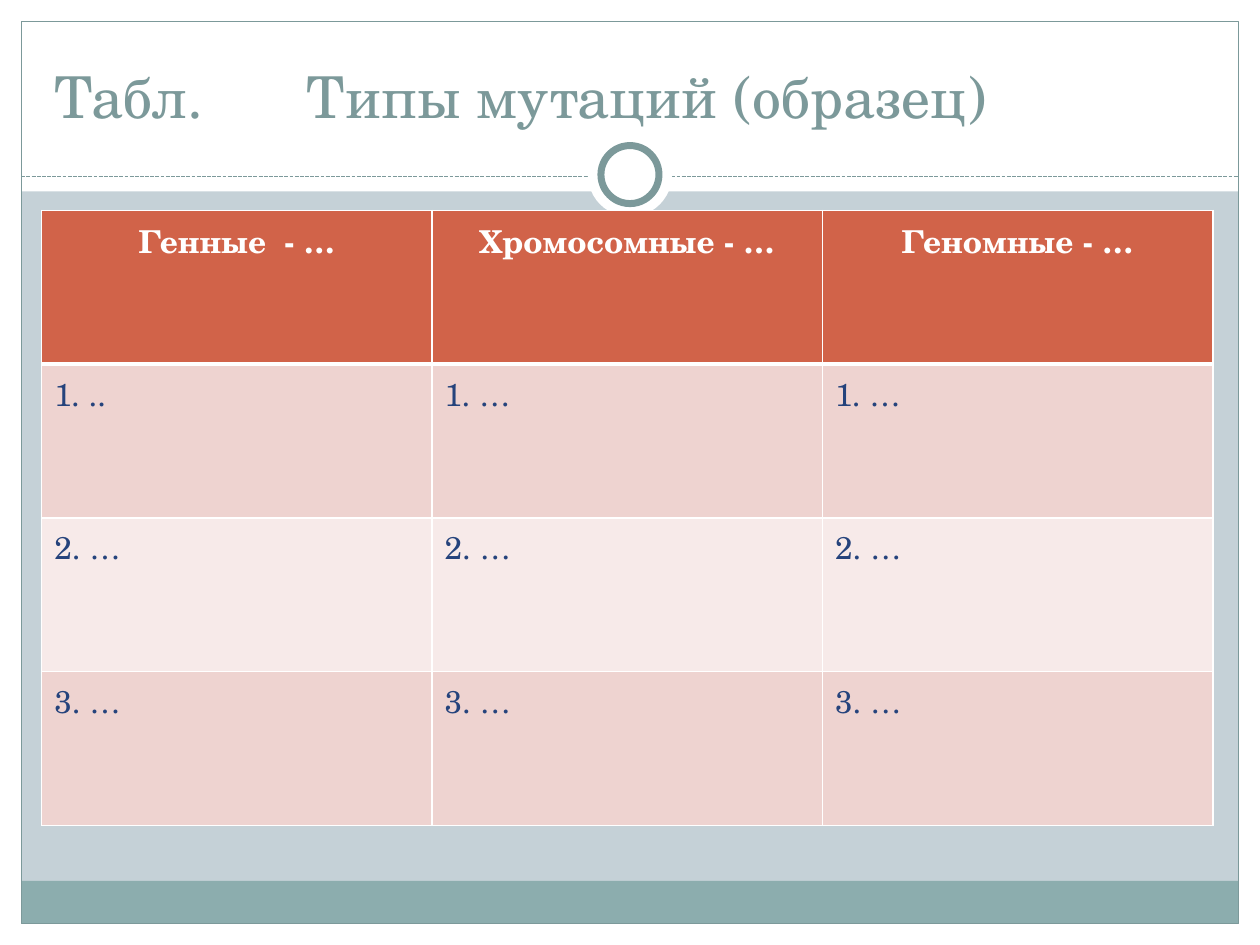
from lxml import etree
from pptx import Presentation
from pptx.dml.color import RGBColor
from pptx.enum.dml import MSO_LINE
from pptx.enum.shapes import MSO_CONNECTOR, MSO_SHAPE
from pptx.enum.text import MSO_ANCHOR, PP_ALIGN
from pptx.oxml.ns import qn
from pptx.util import Cm, Pt

RECTANGLE, OVAL = MSO_SHAPE.RECTANGLE, MSO_SHAPE.OVAL
STRAIGHT = MSO_CONNECTOR.STRAIGHT
DASH = MSO_LINE.SQUARE_DOT
BOTTOM = MSO_ANCHOR.BOTTOM
LEFT, CENTER = PP_ALIGN.LEFT, PP_ALIGN.CENTER

TITLE = "Табл. \t\tТипы мутаций (образец)"
ROWS = [
    ["Генные  - …", "Хромосомные - …", "Геномные - …"],
    ["1. ..", "1. …", "1. …"],
    ["2. …", "2. …", "2. …"],
    ["3. …", "3. …", "3. …"],
]
FONT = "TeX Gyre Schola"
COLORS = {
    "background": "C5D1D7",
    "white": "FFFFFF",
    "footer": "8CADAE",
    "accent": "7C999A",
    "header": "D16349",
    "odd": "EED3D0",
    "even": "F7EAE9",
    "text": "25437C",
}
WIDTH, HEIGHT, MARGIN = 25.4, 19.05, 0.43
BAND_HEIGHT, FOOTER_HEIGHT = 3.86, 0.86
RULE_TOP = 3.56
RING_CENTER = (WIDTH / 2, 3.52)
TABLE_LEFT, TABLE_TOP = 0.84, 4.24
COLUMN_WIDTH, ROW_HEIGHT = 7.87, 3.1


def color(name):
    return RGBColor.from_string(COLORS[name])


def add_shape(slide, kind, box, fill=None, line=None, weight=0.75):
    shape = slide.shapes.add_shape(kind, *map(Cm, box))
    shape.shadow.inherit = False
    if fill:
        shape.fill.solid()
        shape.fill.fore_color.rgb = color(fill)
    else:
        shape.fill.background()
    if line:
        shape.line.color.rgb = color(line)
        shape.line.width = Pt(weight)
    else:
        shape.line.fill.background()


def add_circle(slide, diameter, **style):
    left, top = (center - diameter / 2 for center in RING_CENTER)
    add_shape(slide, OVAL, (left, top, diameter, diameter), **style)


def add_frame(slide):
    inner_width, inner_height = WIDTH - 2 * MARGIN, HEIGHT - 2 * MARGIN
    white_boxes = [
        (0, HEIGHT - MARGIN, WIDTH, MARGIN),
        (0, 0, WIDTH, BAND_HEIGHT),
        (0, 0, MARGIN, HEIGHT),
        (WIDTH - MARGIN, 0, MARGIN, HEIGHT),
    ]
    for box in white_boxes:
        add_shape(slide, RECTANGLE, box, fill="white")
    footer_top = HEIGHT - MARGIN - FOOTER_HEIGHT
    add_shape(slide, RECTANGLE, (MARGIN, footer_top, inner_width, FOOTER_HEIGHT), fill="footer")
    add_shape(slide, RECTANGLE, (MARGIN, MARGIN, inner_width, inner_height), line="accent")
    rule = slide.shapes.add_connector(
        STRAIGHT, Cm(MARGIN), Cm(RULE_TOP), Cm(WIDTH - MARGIN), Cm(RULE_TOP))
    rule.line.color.rgb = color("accent")
    rule.line.width = Pt(0.75)
    rule.line.dash_style = DASH
    etree.SubElement(rule.element.spPr, qn("a:effectLst"))
    add_circle(slide, 1.7, fill="white")
    add_circle(slide, 1.17, fill="white", line="accent", weight=4)


def write_text(text_frame, text, size, tone, bold=False, align=LEFT):
    paragraph = text_frame.paragraphs[0]
    paragraph.alignment = align
    run = paragraph.add_run()
    run.text = text
    run.font.name = FONT
    run.font.size = Pt(size)
    run.font.bold = bold
    run.font.color.rgb = color(tone)


def format_title(slide):
    title = slide.shapes.title
    title.element.getparent().append(title.element)
    title.left, title.top, title.width, title.height = map(Cm, (0.84, 0.64, 23.7, 2.11))
    title.text_frame.word_wrap = True
    title.text_frame.vertical_anchor = BOTTOM
    write_text(title.text_frame, TITLE, 33, "accent")


def set_borders(cell, **weights):
    properties = cell._tc.get_or_add_tcPr()
    for side in "LRTB":
        width = str(Pt(weights.get(side, 1)))
        line = etree.SubElement(properties, qn(f"a:ln{side}"), w=width)
        fill = etree.SubElement(line, qn("a:solidFill"))
        etree.SubElement(fill, qn("a:srgbClr"), val=COLORS["white"])


def add_mutation_table(slide):
    row_count, column_count = len(ROWS), len(ROWS[0])
    table = slide.shapes.add_table(
        row_count, column_count, Cm(TABLE_LEFT), Cm(TABLE_TOP),
        Cm(COLUMN_WIDTH * column_count), Cm(ROW_HEIGHT * row_count)).table
    for column in table.columns:
        column.width = Cm(COLUMN_WIDTH)
    for row_index, texts in enumerate(ROWS):
        table.rows[row_index].height = Cm(ROW_HEIGHT)
        is_header = row_index == 0
        fill = "header" if is_header else "odd" if row_index % 2 else "even"
        weights = {0: {"B": 3}, 1: {"T": 3}}.get(row_index, {})
        for column_index, text in enumerate(texts):
            cell = table.cell(row_index, column_index)
            set_borders(cell, **weights)
            cell.fill.solid()
            cell.fill.fore_color.rgb = color(fill)
            write_text(cell.text_frame, text, 18, "white" if is_header else "text",
                       bold=is_header, align=CENTER if is_header else LEFT)


def main():
    presentation = Presentation()
    presentation.slide_width, presentation.slide_height = Cm(WIDTH), Cm(HEIGHT)
    slide = presentation.slides.add_slide(presentation.slide_layouts[5])
    slide.background.fill.solid()
    slide.background.fill.fore_color.rgb = color("background")
    add_frame(slide)
    format_title(slide)
    add_mutation_table(slide)
    presentation.save("out.pptx")


if __name__ == "__main__":
    main()
